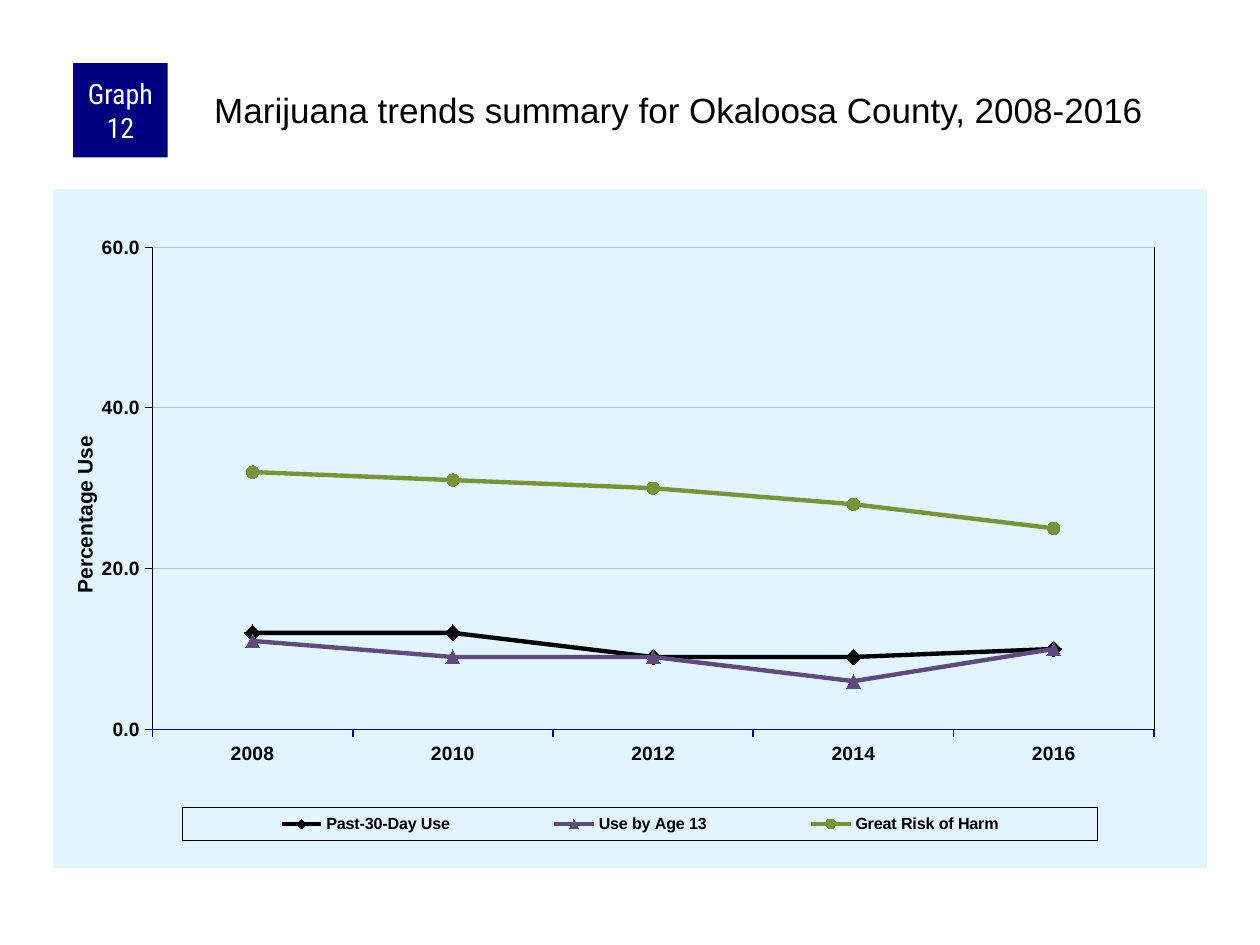
from dataclasses import dataclass
from typing import Any

from lxml import etree
from pptx import Presentation
from pptx.chart.data import CategoryChartData
from pptx.dml.color import RGBColor
from pptx.enum.chart import XL_CHART_TYPE, XL_LEGEND_POSITION, XL_MARKER_STYLE, XL_TICK_MARK
from pptx.enum.shapes import MSO_SHAPE
from pptx.enum.text import MSO_ANCHOR, PP_ALIGN
from pptx.oxml import parse_xml
from pptx.oxml.ns import nsdecls, qn
from pptx.util import Inches, Pt

LINE_MARKERS = XL_CHART_TYPE.LINE_MARKERS
LEGEND_RIGHT = XL_LEGEND_POSITION.RIGHT
TICK_OUTSIDE = XL_TICK_MARK.OUTSIDE
DIAMOND = XL_MARKER_STYLE.DIAMOND
TRIANGLE = XL_MARKER_STYLE.TRIANGLE
CIRCLE = XL_MARKER_STYLE.CIRCLE
RECTANGLE = MSO_SHAPE.RECTANGLE
TOP = MSO_ANCHOR.TOP
MIDDLE = MSO_ANCHOR.MIDDLE
LEFT = PP_ALIGN.LEFT
CENTER = PP_ALIGN.CENTER

BLACK = RGBColor(0x00, 0x00, 0x00)
WHITE = RGBColor(0xFF, 0xFF, 0xFF)
NAVY = RGBColor(0x00, 0x00, 0x80)
SILVER = RGBColor(0xC0, 0xC0, 0xC0)
PALE_BLUE = RGBColor(0xE1, 0xF4, 0xFF)
PURPLE = RGBColor(0x60, 0x4A, 0x7B)
GREEN = RGBColor(0x77, 0x93, 0x3C)

CHART_WIDTH = Inches(9.16)
CHART_HEIGHT = Inches(5.39)
YEARS = ["2008", "2010", "2012", "2014", "2016"]


@dataclass(frozen=True)
class Trend:
    """One line of the chart."""

    name: str
    values: tuple[int, ...]
    color: RGBColor
    marker: XL_MARKER_STYLE
    marker_size: int


TRENDS = [
    Trend("Past-30-Day Use", (12, 12, 9, 9, 10), BLACK, DIAMOND, 9),
    Trend("Use by Age 13", (11, 9, 9, 6, 10), PURPLE, TRIANGLE, 8),
    Trend("Great Risk of Harm", (32, 31, 30, 28, 25), GREEN, CIRCLE, 7),
]


def set_attributes(target: Any, values: dict[str, Any]) -> None:
    """Set every named attribute on the target."""
    for name, value in values.items():
        setattr(target, name, value)


def format_font(font: Any, size: float, color: RGBColor = BLACK, bold: bool = False, name: str = "Arial") -> None:
    """Give a font its face, size, weight and colour."""
    set_attributes(font, {"name": name, "size": Pt(size), "bold": bold})
    font.color.rgb = color


def format_line(line: Any, color: RGBColor, width: float) -> None:
    """Give a line its colour and width."""
    line.color.rgb = color
    line.width = Pt(width)


def write_text(shape: Any, text: str, frame_format: dict[str, Any], alignment: PP_ALIGN, **font_format: Any) -> None:
    """Write one formatted paragraph into a shape."""
    set_attributes(shape.text_frame, {"word_wrap": True, **frame_format})
    paragraph = shape.text_frame.paragraphs[0]
    paragraph.alignment = alignment
    run = paragraph.add_run()
    run.text = text
    format_font(run.font, **font_format)


def place(element: Any, index: int, target: str | None = None, **lengths: int) -> None:
    """Give a chart part a manual layout from lengths inside the chart."""
    for existing in element.findall(qn("c:layout")):
        element.remove(existing)
    values: dict[str, Any] = {"layoutTarget": target} if target else {}
    values |= {"xMode": "edge", "yMode": "edge"}
    for name, length in lengths.items():
        values[name] = round(length / (CHART_WIDTH if name in "xw" else CHART_HEIGHT), 4)
    node = parse_xml(f"<c:layout {nsdecls('c')}/>")
    manual = etree.SubElement(node, qn("c:manualLayout"))
    for name, value in values.items():
        etree.SubElement(manual, qn(f"c:{name}")).set("val", str(value))
    element.insert(index, node)


def chart_part_style(fill: RGBColor | None, line: RGBColor | None) -> Any:
    """Return shape properties with an optional fill and hairline."""
    def paint(color: RGBColor | None) -> str:
        return f'<a:solidFill><a:srgbClr val="{color}"/></a:solidFill>' if color is not None else "<a:noFill/>"

    return parse_xml(
        f'<c:spPr {nsdecls("c", "a")}>{paint(fill)}<a:ln w="{Pt(0.25)}">{paint(line)}</a:ln></c:spPr>'
    )


def format_axis(axis: Any, line_color: RGBColor, line_width: float) -> None:
    """Format the shared parts of an axis."""
    axis.major_tick_mark = TICK_OUTSIDE
    format_font(axis.tick_labels.font, 11, bold=True)
    format_line(axis.format.line, line_color, line_width)


def format_trend(series: Any, trend: Trend) -> None:
    """Format one line and its markers."""
    series.smooth = False
    format_line(series.format.line, trend.color, 2.5)
    set_attributes(series.marker, {"style": trend.marker, "size": trend.marker_size})
    series.marker.format.fill.solid()
    series.marker.format.fill.fore_color.rgb = trend.color
    format_line(series.marker.format.line, trend.color, 0.75)


def add_trend_chart(slide: Any) -> None:
    """Add the line chart with its axes and legend."""
    data = CategoryChartData(number_format="0.0")
    data.categories = YEARS
    for trend in TRENDS:
        data.add_series(trend.name, trend.values)
    frame = slide.shapes.add_chart(LINE_MARKERS, Inches(0.42), Inches(1.5), CHART_WIDTH, CHART_HEIGHT, data)
    chart = frame.chart
    set_attributes(chart, {"has_title": False, "has_legend": True})
    format_font(chart.font, 8)
    chart.plots[0].vary_by_categories = False
    for series, trend in zip(chart.plots[0].series, TRENDS):
        format_trend(series, trend)

    format_axis(chart.category_axis, NAVY, 1)
    value_axis = chart.value_axis
    format_axis(value_axis, BLACK, 0.25)
    set_attributes(
        value_axis,
        {"minimum_scale": 0, "maximum_scale": 60, "major_unit": 20, "has_major_gridlines": True},
    )
    set_attributes(value_axis.tick_labels, {"number_format": "0.0", "number_format_is_linked": False})
    format_line(value_axis.major_gridlines.format.line, SILVER, 0.25)
    title = value_axis.axis_title
    run = title.text_frame.paragraphs[0].add_run()
    run.text = "Percentage Use"
    format_font(run.font, 12, bold=True)
    place(title._element, 1, x=Inches(0.12), y=Inches(1.93))

    legend = chart.legend
    set_attributes(legend, {"position": LEGEND_RIGHT, "include_in_layout": False})
    format_font(legend.font, 9.2, bold=True)
    place(legend._element, 1, x=Inches(1.03), y=Inches(4.91), w=Inches(7.26), h=Inches(0.26))
    legend._element.find(qn("c:overlay")).addnext(chart_part_style(None, BLACK))

    chart_space = chart._chartSpace
    chart_space.find(qn("c:chart")).addnext(chart_part_style(PALE_BLUE, None))
    plot_area = chart_space.find(f".//{qn('c:plotArea')}")
    place(plot_area, 0, "inner", x=Inches(0.79), y=Inches(0.46), w=Inches(7.95), h=Inches(3.83))
    plot_area.append(chart_part_style(None, BLACK))


def add_heading(slide: Any) -> None:
    """Add the numbered badge and the slide title."""
    badge = slide.shapes.add_shape(RECTANGLE, Inches(0.58), Inches(0.5), Inches(0.75), Inches(0.75))
    badge.shadow.inherit = False
    badge.fill.solid()
    badge.fill.fore_color.rgb = NAVY
    badge.line.fill.background()
    side, none, edge = Inches(0.05), Inches(0), Inches(0.03)
    badge_frame = {"margin_left": side, "margin_right": side, "margin_top": none, "margin_bottom": none,
                   "vertical_anchor": MIDDLE}
    write_text(badge, "Graph 12", badge_frame, CENTER, size=16, color=WHITE, name="Roboto Condensed")

    title = slide.shapes.add_textbox(Inches(1.67), Inches(0.67), Inches(7.92), Inches(0.83))
    title_frame = {"margin_left": edge, "margin_right": none, "margin_top": edge, "margin_bottom": none,
                   "vertical_anchor": TOP}
    write_text(title, "Marijuana trends summary for Okaloosa County, 2008-2016", title_frame, LEFT, size=20)


def main() -> None:
    """Build and save the slide."""
    presentation = Presentation()
    set_attributes(presentation, {"slide_width": Inches(10), "slide_height": Inches(7.5)})
    slide = presentation.slides.add_slide(presentation.slide_layouts[6])
    add_heading(slide)
    add_trend_chart(slide)
    presentation.save("out.pptx")


if __name__ == "__main__":
    main()
